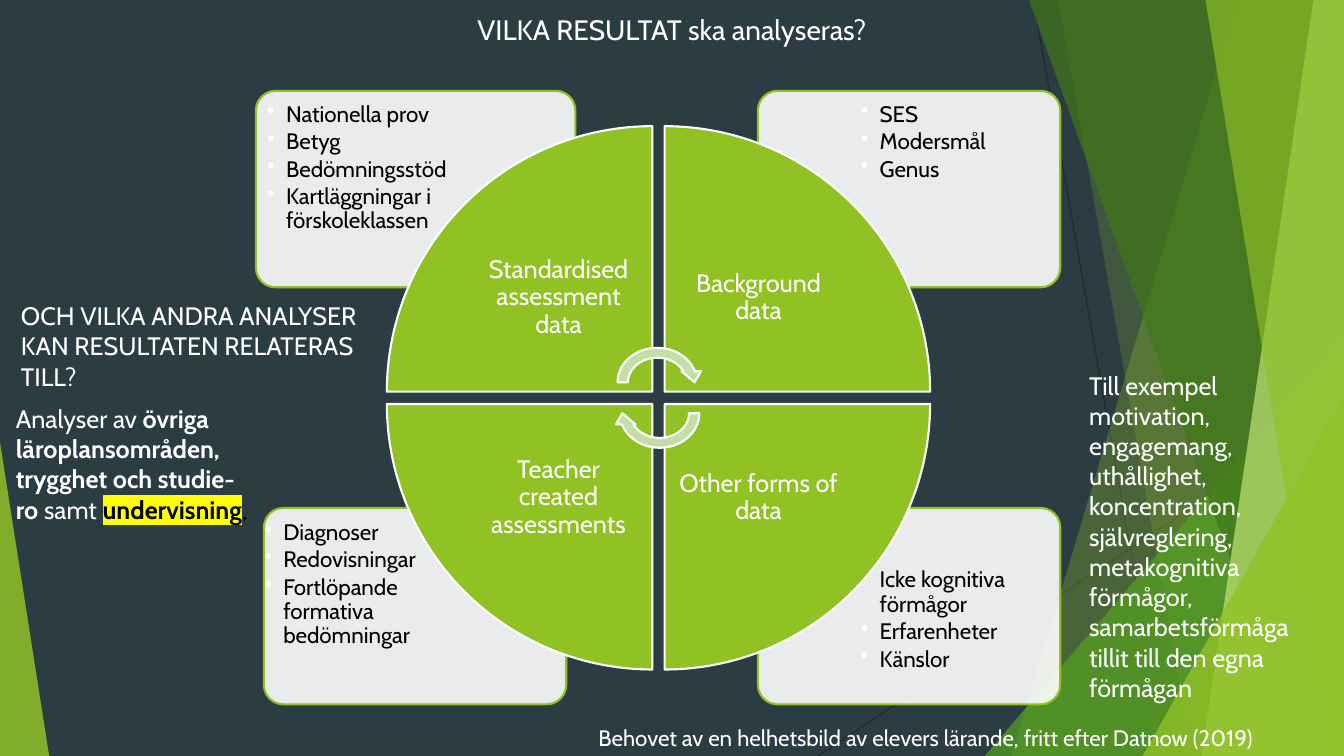
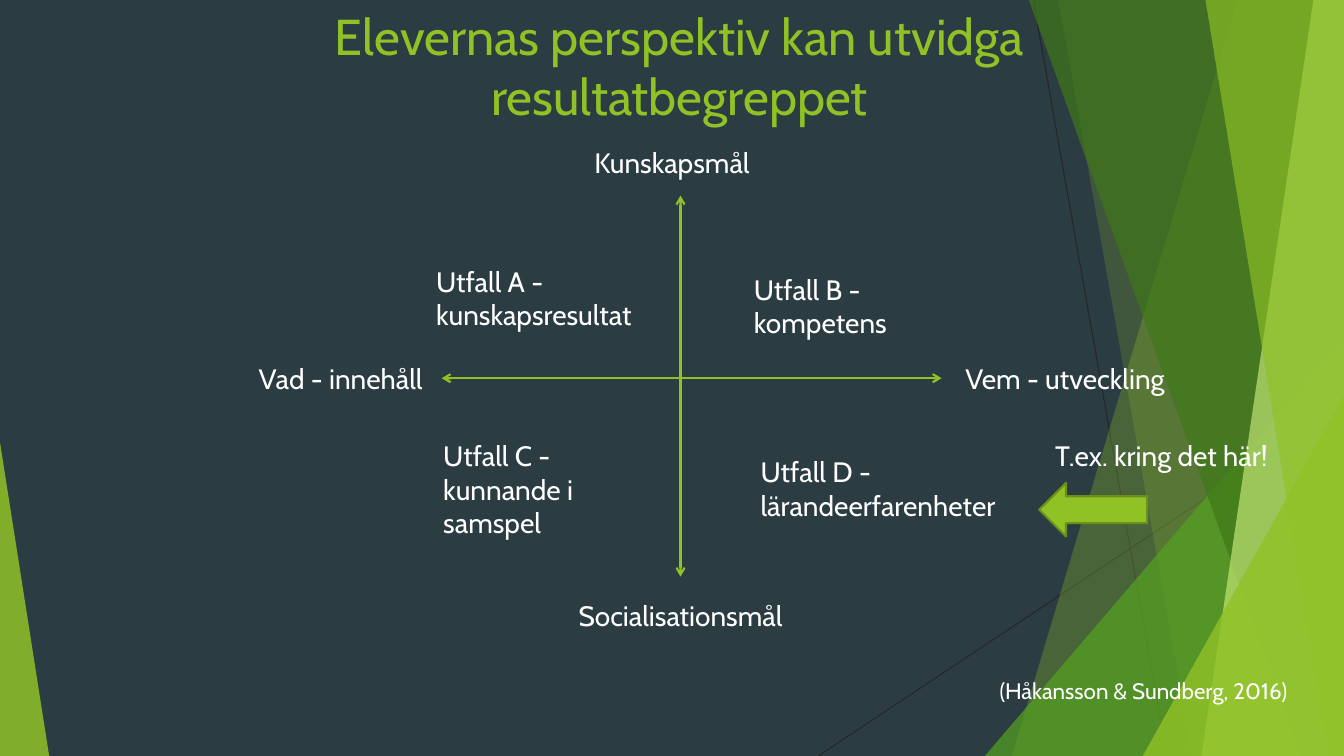
from dataclasses import dataclass
from math import cos, radians, sin

from lxml import etree
from pptx import Presentation
from pptx import util as u
from pptx.dml.color import RGBColor
from pptx.enum import shapes, text
from pptx.oxml import ns

SLATE = RGBColor(0x2C, 0x3C, 0x43)
WHITE = RGBColor(0xFF, 0xFF, 0xFF)
BLACK = RGBColor(0x00, 0x00, 0x00)
INK = RGBColor(0x26, 0x26, 0x26)
LIME = RGBColor(0x90, 0xC2, 0x26)
DISC_GREEN = RGBColor(0x90, 0xC2, 0x23)
LEAF = RGBColor(0x54, 0xA0, 0x21)
FOREST = RGBColor(0x3F, 0x78, 0x19)
PALE_LIME = RGBColor(0xC0, 0xE4, 0x74)
PALE_GREEN = RGBColor(0xC5, 0xDD, 0xA8)
OLIVE = RGBColor(0x6B, 0x90, 0x1C)
YELLOW = RGBColor(0xFF, 0xFF, 0x00)
FONT = "Cabin"
WIDTH, HEIGHT = 33.87, 19.05


@dataclass
class Box:
    left: float
    top: float
    width: float
    height: float

    def inner(self, x, y, width, height):
        return Box(self.left + x, self.top + y, width, height)

    def lengths(self):
        return [u.Cm(v) for v in (self.left, self.top, self.width, self.height)]


SLIDE = Box(0, 0, WIDTH, HEIGHT)


def add_xml(parent, tag, **attributes):
    return etree.SubElement(parent, ns.qn(tag), attributes)


def paint(shape, fill, line=None, opacity=100):
    shape.shadow.inherit = False
    shape.fill.solid()
    shape.fill.fore_color.rgb = fill
    if opacity < 100:
        color = shape.fill._xPr.find(ns.qn("a:solidFill"))[0]
        add_xml(color, "a:alpha", val=str(opacity * 1000))
    if line is None:
        shape.line.fill.background()
    else:
        shape.line.color.rgb = line
        shape.line.width = u.Pt(1.5)


def add_preset(slide, kind, box, fill, line=None, opacity=100, adjustment=None):
    shape = slide.shapes.add_shape(kind, *box.lengths())
    if adjustment is not None:
        shape.adjustments[0] = adjustment
    paint(shape, fill, line, opacity)
    return shape


def add_outline(slide, points, fill, line=None, opacity=100):
    points = [(u.Cm(x), u.Cm(y)) for x, y in points]
    builder = slide.shapes.build_freeform(*points[0])
    builder.add_line_segments(points[1:], close=True)
    paint(builder.convert_to_shape(), fill, line, opacity)


def add_line(slide, start, end, color, width, arrows=False):
    line = slide.shapes.add_connector(
        shapes.MSO_CONNECTOR.STRAIGHT, *[u.Cm(v) for v in (*start, *end)])
    line.line.color.rgb = color
    line.line.width = u.Pt(width)
    if arrows:
        for tag in ("a:headEnd", "a:tailEnd"):
            add_xml(line.line._get_or_add_ln(), tag, type="arrow")
    add_xml(line._element.spPr, "a:effectLst")


def format_run(run, size, color=WHITE, bold=False):
    run.font.name = FONT
    run.font.size = u.Pt(size)
    run.font.color.rgb = color
    run.font.bold = bold


def add_text(slide, box, lines, size, color=WHITE, align=None, margins=(0.25, 0.13),
             anchor=text.MSO_ANCHOR.TOP, spacing=None):
    frame = slide.shapes.add_textbox(*box.lengths()).text_frame
    frame.word_wrap = True
    frame.vertical_anchor = anchor
    frame.margin_left = frame.margin_right = u.Cm(margins[0])
    frame.margin_top = frame.margin_bottom = u.Cm(margins[1])
    frame.text = "\n".join(lines)
    for paragraph in frame.paragraphs:
        paragraph.alignment = align
        paragraph.line_spacing = spacing
        for run in paragraph.runs:
            format_run(run, size, color)
    return frame


def add_bullets(slide, box, lines):
    frame = add_text(slide, box, lines, 16, BLACK, margins=(0.18, 0.18), spacing=0.9)
    for index, paragraph in enumerate(frame.paragraphs):
        paragraph.space_before = u.Pt(2.4 if index else 0)
        properties = paragraph._p.get_or_add_pPr()
        properties.set("marL", str(u.Cm(0.48)))
        properties.set("indent", str(u.Cm(-0.48)))
        add_xml(add_xml(properties, "a:buClr"), "a:srgbClr", val=str(WHITE))
        add_xml(properties, "a:buChar", char="•")


def add_backdrop(slide, box):
    right, bottom = box.left + box.width, box.top + box.height

    def band(top_x, bottom_x, color, opacity):
        add_outline(slide, [(box.left + top_x, box.top), (right, box.top),
                            (right, bottom), (box.left + bottom_x, bottom)],
                    color, opacity=opacity)

    def corner(x, y, width, color, opacity, apex):
        add_preset(slide, shapes.MSO_SHAPE.ISOSCELES_TRIANGLE,
                   box.inner(x, y, width, box.height - y), color,
                   opacity=opacity, adjustment=apex)

    add_line(slide, (box.left + 26.04, box.top), (box.left + 29.41, bottom), INK, 0.75)
    add_line(slide, (right, box.top + 10.24), (box.left + 20.62, bottom), INK, 0.75)
    band(31.19, 25.5, LIME, 30)
    band(26.67, 30.05, LIME, 20)
    corner(24.82, 8.47, box.width - 24.82, LEAF, 72, 1)
    band(25.93, 32.79, FOREST, 70)
    band(33.1, 30.28, PALE_LIME, 70)
    band(30.38, 33.48, LIME, 65)
    corner(28.8, 9.97, box.width - 28.8, LIME, 80, 1)
    corner(0, 11.14, 1.24, LIME, 85, 0)


def add_cards(slide, box):
    cards = [
        (12.65, 10.51, 7.62, 2.41, 1.35, 5.13,
         ["Icke kognitiva förmågor", "Erfarenheter", "Känslor"]),
        (0.2, 10.51, 7.62, -0.17, 0.15, 5.49,
         ["Diagnoser", "Redovisningar", "Fortlöpande formativa bedömningar"]),
        (12.65, 0, 7.62, 2.41, 0.12, 5.13, ["SES", "Modersmål", "Genus"]),
        (0, 0, 8.05, 0.1, 0.12, 5.41,
         ["Nationella prov", "Betyg", "Bedömningsstöd",
          "Kartläggningar i förskoleklassen"]),
    ]
    for x, y, width, text_x, text_y, text_width, lines in cards:
        card = box.inner(x, y, width, 4.95)
        add_preset(slide, shapes.MSO_SHAPE.ROUNDED_RECTANGLE, card,
                   WHITE, DISC_GREEN, opacity=90, adjustment=0.1)
        add_bullets(slide, card.inner(text_x, text_y, text_width, 3.48), lines)


def add_cycle_arrow(slide, center, direction):
    outer = [(cos(radians(a)), 0.87 * sin(radians(a))) for a in range(180, 18, -6)]
    inner = [(0.74 * cos(radians(a)), 0.62 * sin(radians(a))) for a in range(27, 181, 6)]
    head = [(0.95, 0.28), (1.1, 0.28), (0.94, 0), (0.61, 0.28)]
    points = [(center[0] + direction * (x - 0.03), center[1] - direction * (y + 0.39))
              for x, y in outer + head + inner + [(-0.74, 0)]]
    add_outline(slide, points, PALE_GREEN, WHITE)


def add_disc(slide, box):
    gap, label = 0.31, 4.73
    quarter = (box.width - gap) / 2
    far = quarter + gap
    quarters = [
        (0, 0, "Standardised assessment data"),
        (1, 0, "Background data"),
        (1, 1, "Other forms of data"),
        (0, 1, "Teacher created assessments"),
    ]
    for turn, (column, row, caption) in enumerate(quarters):
        wedge = add_preset(slide, shapes.MSO_SHAPE.PIE_WEDGE,
                           box.inner(column * far, row * far, quarter, quarter),
                           DISC_GREEN, WHITE)
        wedge.rotation = 90 * turn
        x, y = (far if side else quarter - label for side in (column, row))
        add_text(slide, box.inner(x, y, label, label), [caption], 18,
                 align=text.PP_ALIGN.CENTER, margins=(0.36, 0.36),
                 anchor=text.MSO_ANCHOR.MIDDLE, spacing=0.9)
    center = (box.left + box.width / 2, box.top + box.height / 2)
    for direction in (1, -1):
        add_cycle_arrow(slide, center, direction)


def add_analyses(slide, box):
    add_text(slide, box.inner(0.13, 0, 9.45, 2.57),
             ["OCH VILKA ANDRA ANALYSER KAN RESULTATEN RELATERAS TILL?"], 18)
    frame = add_text(slide, box.inner(0, 2.59, 7.49, 3.33), ["", ""], 18)
    parts = [
        [("Analyser av ", WHITE, False),
         ("övriga läroplansområden, trygghet och studie-", WHITE, True)],
        [("ro ", WHITE, True), ("samt ", WHITE, False),
         ("undervisning", BLACK, True), (",", BLACK, False)],
    ]
    for paragraph, pieces in zip(frame.paragraphs, parts):
        for words, color, bold in pieces:
            run = paragraph.add_run()
            run.text = words
            format_run(run, 18, color, bold)
    marked = frame.paragraphs[1].runs[2].font._element
    highlight = etree.Element(ns.qn("a:highlight"))
    add_xml(highlight, "a:srgbClr", val=str(YELLOW))
    marked.find(ns.qn("a:solidFill")).addnext(highlight)


def add_outcome_axes(slide, box):
    cross_x, cross_y = box.left + 6.02, box.top + 4.6
    add_line(slide, (box.left, cross_y), (box.left + box.width, cross_y), LIME, 1.5, True)
    add_line(slide, (cross_x, box.top), (cross_x, box.top + box.height), LIME, 1.5, True)
    labels = [
        (-4.86, 4.04, 5.41, "Vad - innehåll"),
        (12.95, 4.04, 6.2, "Vem - utveckling"),
        (3.6, -1.4, 5.41, "Kunskapsmål"),
        (3.2, 10.01, 6.6, "Socialisationsmål"),
        (-0.39, 1.6, 6.2, "Utfall A - kunskapsresultat"),
        (7.62, 1.8, 4.19, "Utfall B - kompetens"),
        (-0.21, 5.99, 5.21, "Utfall C - kunnande i samspel"),
        (7.79, 6.4, 7.42, "Utfall D - lärandeerfarenheter"),
    ]
    for x, y, width, label in labels:
        add_text(slide, box.inner(x, y, width, 1.12), [label], 20)


def add_hint(slide, box):
    add_text(slide, box.inner(0.15, 0, 7.14, 1.12), ["T.ex. kring det här!"], 20)
    add_preset(slide, shapes.MSO_SHAPE.LEFT_ARROW, box.inner(0, 1.25, 2.72, 1.35),
               LIME, OLIVE)


def new_slide(presentation):
    slide = presentation.slides.add_slide(presentation.slide_layouts[6])
    add_backdrop(slide, SLIDE)
    return slide


def add_title(slide, box, title, size, color):
    add_text(slide, box, [title], size, color, align=text.PP_ALIGN.CENTER)


def build_results_slide(presentation):
    slide = new_slide(presentation)
    board = SLIDE.inner(6.45, 2.29, 20.27, 15.46)
    add_cards(slide, board)
    add_disc(slide, board.inner(3.3, 0.89, 13.69, 13.69))
    add_title(slide, SLIDE.inner(0, 0.18, WIDTH, 1.12),
              "VILKA RESULTAT ska analyseras?", 20, WHITE)
    add_text(slide, SLIDE.inner(14.83, 18.11, 18.87, 0.94),
             ["Behovet av en helhetsbild av elevers lärande, fritt efter Datnow (2019)"], 16)
    add_text(slide, SLIDE.inner(27.2, 9.19, 6.5, 8.71),
             ["Till exempel motivation, engagemang, uthållighet, koncentration, "
              "självreglering, metakognitiva förmågor, samarbetsförmåga "
              "tillit till den egna förmågan"], 18)
    add_analyses(slide, SLIDE.inner(0.15, 7.44, 9.58, 5.92))


def build_perspective_slide(presentation):
    slide = new_slide(presentation)
    add_title(slide, SLIDE.inner(6.71, 0, 20.83, 3.53),
              "Elevernas perspektiv kan utvidga resultatbegreppet", 36, LIME)
    add_outcome_axes(slide, SLIDE.inner(11.13, 4.93, 12.6, 9.6))
    add_text(slide, SLIDE.inner(24.94, 16.94, 8.9, 0.94),
             ["(Håkansson & Sundberg, 2016)"], 16)
    add_hint(slide, SLIDE.inner(26.19, 10.92, 7.29, 2.6))


def main():
    presentation = Presentation()
    presentation.slide_width, presentation.slide_height = u.Cm(WIDTH), u.Cm(HEIGHT)
    background = presentation.slide_master.background.fill
    background.solid()
    background.fore_color.rgb = SLATE
    build_results_slide(presentation)
    build_perspective_slide(presentation)
    presentation.save("out.pptx")


if __name__ == "__main__":
    main()
